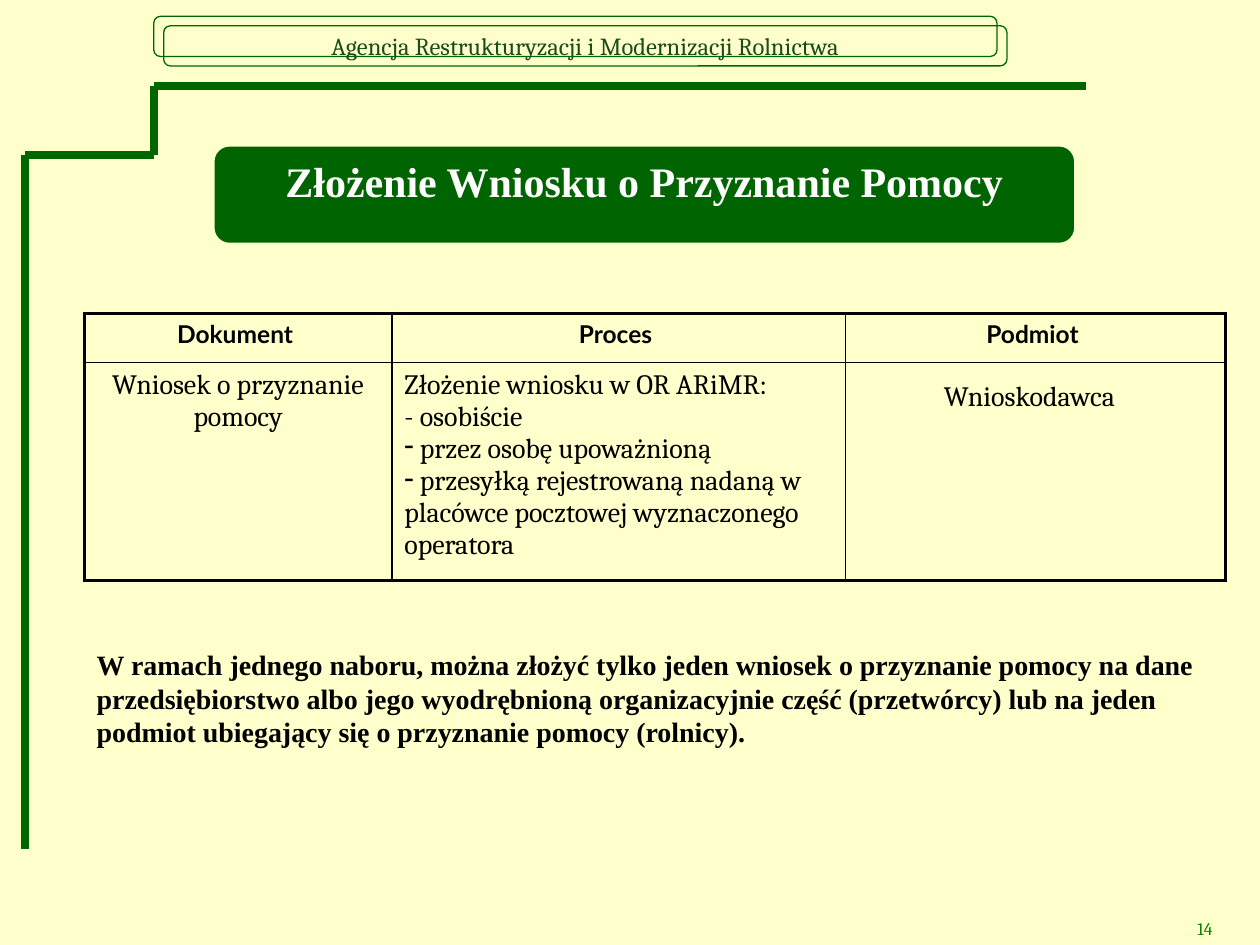
from itertools import pairwise

from lxml import etree
from pptx import Presentation
from pptx.dml.color import RGBColor
from pptx.enum.shapes import MSO_CONNECTOR, MSO_SHAPE
from pptx.enum.text import MSO_ANCHOR, PP_ALIGN
from pptx.oxml.ns import qn
from pptx.util import Cm, Pt

STRAIGHT = MSO_CONNECTOR.STRAIGHT
ROUNDED = MSO_SHAPE.ROUNDED_RECTANGLE
TOP, MIDDLE = MSO_ANCHOR.TOP, MSO_ANCHOR.MIDDLE
LEFT, CENTER, RIGHT = PP_ALIGN.LEFT, PP_ALIGN.CENTER, PP_ALIGN.RIGHT

COLORS = {
    "background": "FFFFCC",
    "frame": "006600",
    "agency": "194D19",
    "title": "006400",
    "number": "008000",
    "white": "FFFFFF",
    "black": "000000",
}
FRAME = [(21.89, 1.73), (3.1, 1.73), (3.1, 3.12), (0.51, 3.12), (0.51, 17.12)]
COLUMNS = [6.2, 9.14, 7.67]
ROWS = [0.99, 4.39]
CELLS = [
    ["Dokument ", "Proces ", "Podmiot "],
    [
        "Wniosek o przyznanie pomocy",
        "Złożenie wniosku w OR ARiMR:\n- osobiście\n przez osobę upoważnioną\n"
        " przesyłką rejestrowaną nadaną w placówce pocztowej wyznaczonego operatora",
        "Wnioskodawca",
    ],
]
NOTE = (
    "W ramach jednego naboru, można złożyć tylko jeden wniosek o przyznanie pomocy "
    "na dane przedsiębiorstwo albo jego wyodrębnioną organizacyjnie część "
    "(przetwórcy) lub na jeden podmiot ubiegający się o przyznanie pomocy (rolnicy)."
)


def rgb(name):
    """Return a palette colour."""
    return RGBColor.from_string(COLORS[name])


def write(tf, text, size, font, color, bold=False, align=LEFT):
    """Fill a text frame with evenly formatted paragraphs."""
    tf.text = text
    for p in tf.paragraphs:
        p.alignment = align
        for r in p.runs:
            r.font.size, r.font.name, r.font.bold = Pt(size), font, bold
            r.font.color.rgb = rgb(color)


def add_frame(s):
    """Draw the stepped frame line."""
    for start, end in pairwise(FRAME):
        line = s.shapes.add_connector(STRAIGHT, *map(Cm, start + end))
        line.line.color.rgb = rgb("frame")
        line.line.width = Pt(4.5)
        etree.SubElement(line._element.spPr, qn("a:effectLst"))


def add_rounded(s, box, line, width, fill=None, anchor=MIDDLE):
    """Add a rounded rectangle and return its text frame."""
    sp = s.shapes.add_shape(ROUNDED, *map(Cm, box))
    sp.shadow.inherit = False
    if fill:
        sp.fill.solid()
        sp.fill.fore_color.rgb = rgb(fill)
    else:
        sp.fill.background()
    sp.line.color.rgb = rgb(line)
    sp.line.width = Pt(width)
    sp.text_frame.vertical_anchor = anchor
    return sp.text_frame


def add_text(s, box, *style, **options):
    """Add a wrapping text box."""
    tf = s.shapes.add_textbox(*map(Cm, box)).text_frame
    tf.word_wrap = True
    write(tf, *style, **options)


def set_borders(cell, widths):
    """Give a cell its left, right, top and bottom borders."""
    tcPr = cell._tc.get_or_add_tcPr()
    for i, (side, width) in enumerate(zip("LRTB", widths)):
        ln = etree.Element(qn(f"a:ln{side}"), w=str(Pt(width)))
        fill = etree.SubElement(ln, qn("a:solidFill"))
        etree.SubElement(fill, qn("a:srgbClr"), val=COLORS["black"])
        tcPr.insert(i, ln)


def add_dash(p):
    """Give a paragraph a dash bullet."""
    pPr = p._p.get_or_add_pPr()
    pPr.set("marL", "0")
    pPr.set("indent", "0")
    etree.SubElement(pPr, qn("a:buChar"), char="-")


def add_process_table(s):
    """Add the document, process and applicant table."""
    frame = s.shapes.add_table(
        len(ROWS), len(COLUMNS), Cm(1.7), Cm(6.32), Cm(sum(COLUMNS)), Cm(sum(ROWS))
    )
    table = frame.table
    table.first_row = table.horz_banding = False
    for column, width in zip(table.columns, COLUMNS):
        column.width = Cm(width)
    for i, height in enumerate(ROWS):
        table.rows[i].height = Cm(height)
        for j, text in enumerate(CELLS[i]):
            cell = table.cell(i, j)
            cell.fill.background()
            outer = (j == 0, j == len(COLUMNS) - 1, i == 0, i == len(ROWS) - 1)
            set_borders(cell, [2.25 if edge else 1 for edge in outer])
            size, font = (14, "Lato") if i == 0 else (16, "Cambria")
            align = LEFT if (i, j) == (1, 1) else CENTER
            write(cell.text_frame, text, size, font, "black", i == 0, align)
    for p in table.cell(1, 1).text_frame.paragraphs[2:]:
        add_dash(p)
    applicant = table.cell(1, 2)
    applicant.margin_top, applicant.margin_right = Cm(0.38), Cm(0.5)


def main():
    """Build the slide and save it."""
    prs = Presentation()
    prs.slide_width, prs.slide_height = Cm(25.4), Cm(19.05)
    s = prs.slides.add_slide(prs.slide_layouts[6])
    s.background.fill.solid()
    s.background.fill.fore_color.rgb = rgb("background")

    add_frame(s)
    add_rounded(s, (3.1, 0.33, 17, 0.81), "frame", 0.75)
    tf = add_rounded(s, (3.3, 0.52, 17, 0.81), "frame", 0.75)
    tf.word_wrap = False
    write(tf, "Agencja Restrukturyzacji i Modernizacji Rolnictwa",
          14, "Cambria", "agency", align=CENTER)
    add_text(s, (17.3, 18.39, 7.39, 0.74), "14", 10, "Cambria", "number", align=RIGHT)
    add_process_table(s)
    tf = add_rounded(s, (4.29, 2.92, 17.4, 2.01), "background", 2, "title", TOP)
    write(tf, "Złożenie Wniosku o Przyznanie Pomocy",
          24, "Times New Roman", "white", True, CENTER)
    add_text(s, (1.7, 12.93, 23.01, 2.31), NOTE, 16, "Times New Roman", "black", bold=True)
    prs.save("out.pptx")


if __name__ == "__main__":
    main()
